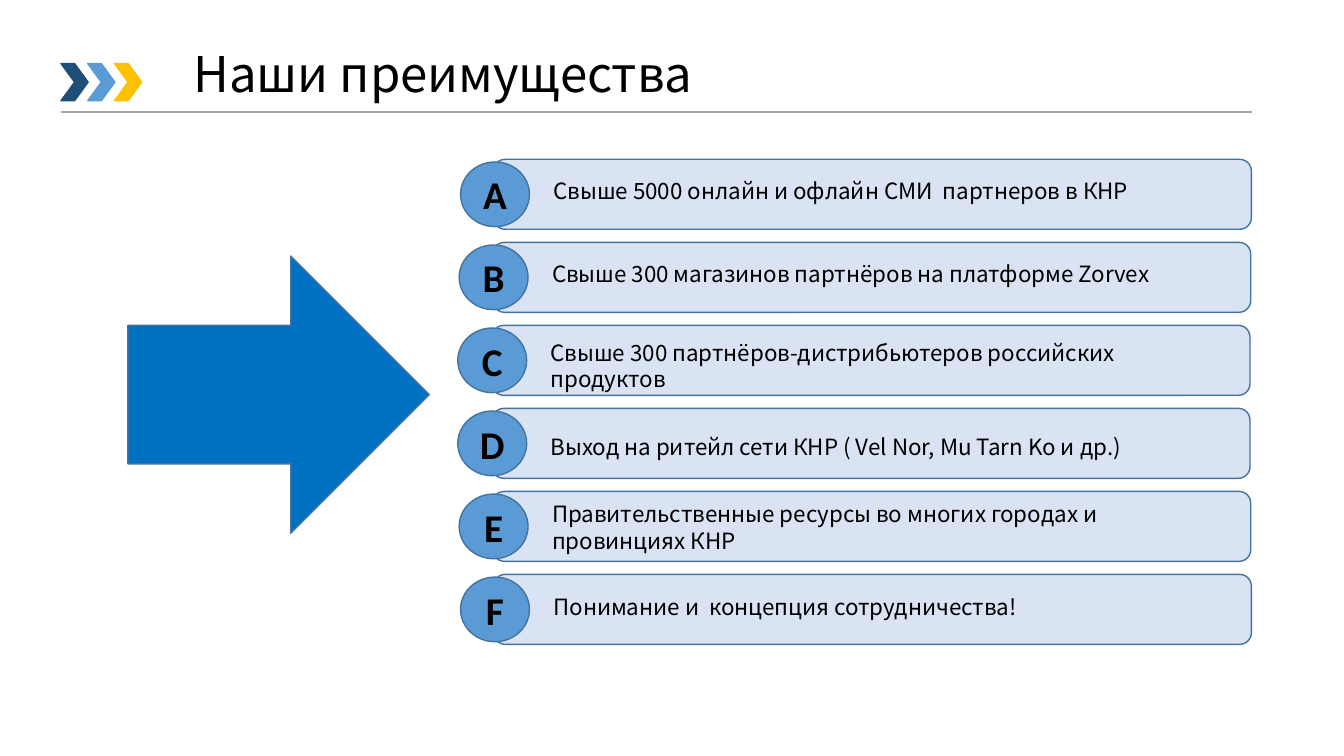
from pptx import Presentation
from pptx.dml.color import RGBColor
from pptx.enum.shapes import MSO_CONNECTOR, MSO_SHAPE
from pptx.enum.text import MSO_ANCHOR, MSO_AUTO_SIZE, PP_ALIGN
from pptx.oxml.ns import qn
from pptx.util import Pt

TITLE = "Наши преимущества"
ADVANTAGES = [
    ("A", "Свыше 5000 онлайн и офлайн СМИ  партнеров в КНР", 2, 9.5),
    ("B", "Свыше 300 магазинов партнёров на платформе Zorvex", 1, 9.5),
    ("C", "Свыше 300 партнёров-дистрибьютеров российских продуктов", 0, 6),
    ("D", "Выход на ритейл сети КНР ( Vel Nor, Mu Tarn Ko и др.)", 0, 14.5),
    ("E", "Правительственные ресурсы во многих городах и провинциях КНР", 1, 3),
    ("F", "Понимание и  концепция сотрудничества!", 2, 9.5),
]
COLORS = {
    "text": "000000",
    "navy": "1F4E79",
    "blue": "5B9BD5",
    "gold": "FFC000",
    "rule": "A6A6A6",
    "arrow": "0070C0",
    "outline": "43739E",
    "bar": "DAE3F3",
}
TEXT_FONT, LETTER_FONT = "Noto Sans CJK SC", "Calibri"

ROW_TOP, ROW_PITCH = 113.8, 59.3
BAR_LEFT, BAR_WIDTH, BAR_HEIGHT = 351.5, 541.4, 50
BADGE_LEFT, BADGE_WIDTH, BADGE_HEIGHT = 327, 49.2, 46.2
TEXT_GAP, TEXT_WIDTH = 59.2, 493.2
CHEVRON_LEFT, CHEVRON_PITCH = 43.6, 19.1


def rgb(name):
    return RGBColor.from_string(COLORS[name])


def add_block(slide, kind, left, top, width, height, fill, line):
    sp = slide.shapes.add_shape(kind, Pt(left), Pt(top), Pt(width), Pt(height))
    sp.shadow.inherit = False
    sp.fill.solid()
    sp.fill.fore_color.rgb = rgb(fill)
    sp.line.color.rgb = rgb(line)
    sp.line.width = Pt(1)
    return sp


def write(tf, text, font, size, align=PP_ALIGN.LEFT, bold=False):
    tf.text = text
    tf.word_wrap = True
    tf.auto_size = MSO_AUTO_SIZE.NONE
    p = tf.paragraphs[0]
    p.alignment = align
    r = p.runs[0]
    r.font.name = font
    r.font.size = Pt(size)
    r.font.bold = bold
    r.font.color.rgb = rgb("text")
    return p


def add_header(slide):
    title = slide.shapes.title
    title.left, title.top, title.width, title.height = Pt(131), Pt(28.8), Pt(654.5), Pt(51.1)
    p = write(title.text_frame, TITLE, TEXT_FONT, 35.1)
    p.line_spacing = 0.9
    title.text_frame.vertical_anchor = MSO_ANCHOR.MIDDLE

    for i, color in enumerate(("navy", "blue", "gold")):
        left = CHEVRON_LEFT + i * CHEVRON_PITCH
        add_block(slide, MSO_SHAPE.CHEVRON, left, 45.4, 19.4, 26.6, color, color)

    rule = slide.shapes.add_connector(MSO_CONNECTOR.STRAIGHT, Pt(43.9), Pt(80), Pt(894.2), Pt(80))
    rule.line.color.rgb = rgb("rule")
    rule.line.width = Pt(1.5)
    sp_pr = rule._element.spPr
    sp_pr.append(sp_pr.makeelement(qn("a:effectLst"), {}))


def add_advantage(slide, row, letter, text, indent, drop):
    top = ROW_TOP + row * ROW_PITCH
    add_block(slide, MSO_SHAPE.ROUNDED_RECTANGLE, BAR_LEFT + indent / 2, top,
              BAR_WIDTH, BAR_HEIGHT, "bar", "outline")

    left = BADGE_LEFT + indent
    badge = add_block(slide, MSO_SHAPE.OVAL, left, top + (BAR_HEIGHT - BADGE_HEIGHT) / 2,
                      BADGE_WIDTH, BADGE_HEIGHT, "blue", "outline")
    tf = badge.text_frame
    tf.margin_left = tf.margin_right = tf.margin_top = tf.margin_bottom = 0
    tf.vertical_anchor = MSO_ANCHOR.MIDDLE
    write(tf, letter, LETTER_FONT, 28, PP_ALIGN.CENTER, True)

    box = slide.shapes.add_textbox(Pt(left + TEXT_GAP), Pt(top + drop), Pt(TEXT_WIDTH), Pt(26.6))
    write(box.text_frame, text, TEXT_FONT, 16)


def main():
    prs = Presentation()
    prs.slide_width, prs.slide_height = Pt(960), Pt(540)
    slide = prs.slides.add_slide(prs.slide_layouts[5])
    add_header(slide)
    add_block(slide, MSO_SHAPE.RIGHT_ARROW, 91.4, 182.9, 215.3, 198, "arrow", "outline")
    for row, advantage in enumerate(ADVANTAGES):
        add_advantage(slide, row, *advantage)
    prs.save("out.pptx")


if __name__ == "__main__":
    main()
